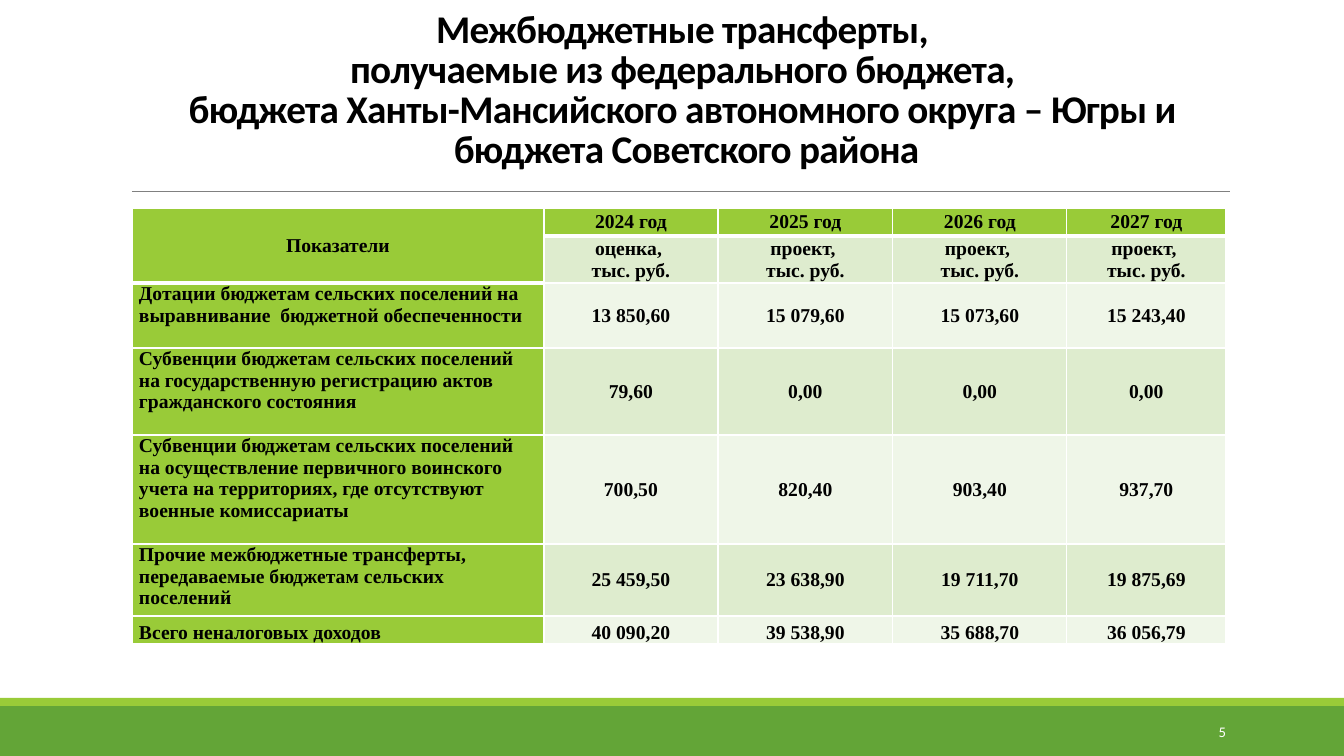
from copy import deepcopy

from lxml.etree import SubElement
from pptx import Presentation
from pptx.dml.color import RGBColor
from pptx.enum.shapes import MSO_CONNECTOR, MSO_SHAPE
from pptx.enum.text import MSO_ANCHOR as ANCHOR, MSO_AUTO_SIZE, PP_ALIGN as ALIGN
from pptx.oxml.ns import qn
from pptx.util import Emu, Pt

SERIF, SANS = "Times New Roman", "Calibri"
BLACK, WHITE, GREY = "000000", "FFFFFF", "808080"
GREEN, LIME, MINT, PALE = "63A537", "99CB38", "DEECCE", "EFF6E8"

TITLE = ("Межбюджетные трансферты, \vполучаемые из федерального бюджета, \v"
         "бюджета Ханты-Мансийского автономного округа – Югры и \v"
         "бюджета Советского района")
COLUMNS = [412, 174, 175, 174, 159]
HEIGHTS = [28, 47, 65, 87, 109, 72, 28]
ROWS = [
    ["Показатели", "2024 год", "2025 год", "2026 год", "2027 год"],
    [""] + ["оценка, \nтыс. руб."] + ["проект, \nтыс. руб."] * 3,
    ["Дотации бюджетам сельских поселений на выравнивание  бюджетной обеспеченности",
     "13 850,60", "15 079,60", "15 073,60", "15 243,40"],
    ["Субвенции бюджетам сельских поселений на государственную регистрацию актов "
     "гражданского состояния", "79,60", "0,00", "0,00", "0,00"],
    ["Субвенции бюджетам сельских поселений на осуществление первичного воинского "
     "учета на территориях, где отсутствуют военные комиссариаты",
     "700,50", "820,40", "903,40", "937,70"],
    ["Прочие межбюджетные трансферты, передаваемые бюджетам сельских поселений",
     "25 459,50", "23 638,90", "19 711,70", "19 875,69"],
    ["Всего неналоговых доходов", "40 090,20", "39 538,90", "35 688,70", "36 056,79"],
]


def px(n):
    return Emu(round(n * 914400 / 100.8))


def rgb(code):
    return RGBColor.from_string(code)


def format_text(tf, size, name, color, bold, align):
    for p in tf.paragraphs:
        p.alignment = align
        for r in p.runs:
            r.font.size, r.font.name, r.font.bold = Pt(size), name, bold
            r.font.color.rgb = rgb(color)


def add_band(slide, x, y, w, h, color):
    sp = slide.shapes.add_shape(MSO_SHAPE.RECTANGLE, px(x), px(y), px(w), px(h))
    sp.shadow.inherit = False
    sp.fill.solid()
    sp.fill.fore_color.rgb = rgb(color)
    sp.line.fill.background()


def add_footer(slide, x, y, w, h, number):
    strip = 8
    add_band(slide, x, y + strip, w, h - strip, GREEN)
    add_band(slide, x, y, w, strip, LIME)
    sp = slide.shapes.add_textbox(px(x + 1092), px(y + 14), px(144), px(40))
    tf = sp.text_frame
    tf.word_wrap = True
    tf.vertical_anchor = ANCHOR.MIDDLE
    tf.text = number
    format_text(tf, 10.5, SANS, WHITE, False, ALIGN.RIGHT)


def add_rule(slide, x, y, w):
    line = slide.shapes.add_connector(MSO_CONNECTOR.STRAIGHT, px(x), px(y), px(x + w), px(y))
    line.line.color.rgb = rgb(GREY)
    line.line.width = Pt(0.5)
    SubElement(line._element.spPr, qn("a:effectLst"))


def place_title(slide, x, y, w, h):
    sp = slide.shapes.title
    sp.left, sp.top, sp.width, sp.height = px(x), px(y), px(w), px(h)
    tf = sp.text_frame
    tf.word_wrap = True
    tf.auto_size = MSO_AUTO_SIZE.NONE
    tf.vertical_anchor = ANCHOR.BOTTOM
    p = tf.paragraphs[0]
    p.text = TITLE
    p.line_spacing = 0.85
    format_text(tf, 28, SANS, BLACK, True, ALIGN.CENTER)
    for r in p.runs:
        r.font._element.set("spc", "-50")
    for br in p._p.findall(qn("a:br")):
        br.append(deepcopy(p.runs[0].font._element))


def add_borders(cell, bottom):
    tcPr = cell._tc.get_or_add_tcPr()
    for side, width in (("L", 1), ("R", 1), ("T", 1), ("B", bottom)):
        ln = SubElement(tcPr, qn("a:ln" + side), w=str(Pt(width)))
        fill = SubElement(ln, qn("a:solidFill"))
        SubElement(fill, qn("a:srgbClr"), val=WHITE)


def fill_cell(cell, text, row, col):
    add_borders(cell, 3 if row == 0 or (row, col) == (1, 0) else 1)
    cell.fill.solid()
    cell.fill.fore_color.rgb = rgb(LIME if row == 0 or col == 0 else MINT if row % 2 else PALE)
    cell.margin_left = cell.margin_right = px(7)
    cell.margin_top = cell.margin_bottom = 0
    label = col == 0 and row > 1
    if row == len(ROWS) - 1:
        cell.vertical_anchor = ANCHOR.BOTTOM
    else:
        cell.vertical_anchor = ANCHOR.TOP if label else ANCHOR.MIDDLE
    if text:
        cell.text_frame.text = text
    format_text(cell.text_frame, 14, SERIF, BLACK, True, ALIGN.LEFT if label else ALIGN.CENTER)


def add_transfers(slide, x, y):
    frame = slide.shapes.add_table(len(ROWS), len(COLUMNS), px(x), px(y),
                                   px(sum(COLUMNS)), px(sum(HEIGHTS)))
    table = frame.table
    for column, width in zip(table.columns, COLUMNS):
        column.width = px(width)
    for row, height in zip(table.rows, HEIGHTS):
        row.height = px(height)
    for i, values in enumerate(ROWS):
        for j, text in enumerate(values):
            fill_cell(table.cell(i, j), text, i, j)
    table.cell(0, 0).merge(table.cell(1, 0))


def main():
    prs = Presentation()
    prs.slide_width, prs.slide_height = px(1344), px(756)
    slide = prs.slides.add_slide(prs.slide_layouts[5])
    add_footer(slide, 0, 698, 1344, 58, "5")
    add_rule(slide, 132, 191, 1098)
    place_title(slide, 104, 80, 1165, 97)
    add_transfers(slide, 132, 208)
    prs.save("out.pptx")


if __name__ == "__main__":
    main()
